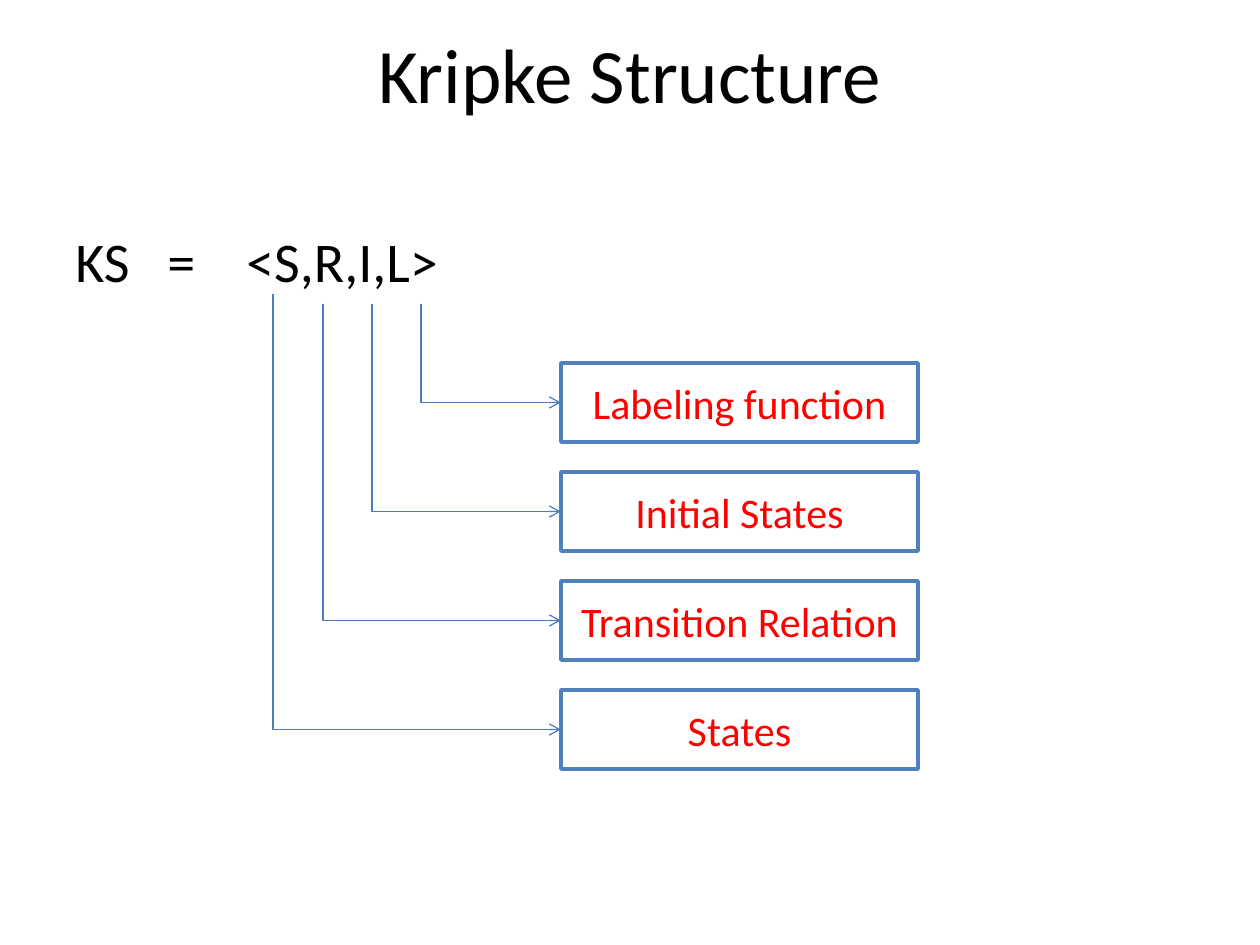
from lxml import etree
from pptx import Presentation, util as u
from pptx.dml.color import RGBColor
from pptx.enum import shapes, text
from pptx.oxml.ns import qn

# Content
TITLE = "Kripke Structure"
DEFINITION = "KS\t=\t<S,R,I,L>"
TAB_STOPS = (92, 171)  # px from the left edge of the text
COMPONENTS = [  # meaning, x and y where its arrow leaves the tuple
    ("Labeling function", 421, 304),
    ("Initial States", 372, 304),
    ("Transition Relation", 323, 304),
    ("States", 273, 294),
]

# Layout in px
BOX_LEFT, BOX_TOP, BOX_W, BOX_H, BOX_PITCH = 561, 363, 357, 79, 109
FONT = "Calibri"
BLACK, RED, WHITE, BORDER, ARROW = "000000", "FF0000", "FFFFFF", "4F81BD", "4B7EBC"


def px(n):
    return u.Emu(round(n * 914400 / 126))


def rgb(value):
    return RGBColor.from_string(value)


def write(shape, words, size, color, align, anchor):
    frame = shape.text_frame
    frame.word_wrap = True
    frame.vertical_anchor = anchor
    frame.text = words
    line = frame.paragraphs[0]
    line.alignment = align
    for run in line.runs:
        run.font.name = FONT
        run.font.size = u.Pt(size)
        run.font.color.rgb = rgb(color)
    return line


def add_meaning(slide, words, top):
    box = slide.shapes.add_shape(shapes.MSO_SHAPE.RECTANGLE,
                                 px(BOX_LEFT), px(top), px(BOX_W), px(BOX_H))
    box.shadow.inherit = False
    box.fill.solid()
    box.fill.fore_color.rgb = rgb(WHITE)
    box.line.color.rgb = rgb(BORDER)
    box.line.width = u.Pt(2)
    write(box, words, 24, RED, text.PP_ALIGN.CENTER, text.MSO_ANCHOR.MIDDLE)


def add_arrow(slide, x, y, end_y):
    arrow = slide.shapes.add_connector(shapes.MSO_CONNECTOR.ELBOW,
                                       px(x), px(y), px(BOX_LEFT), px(end_y))
    arrow.line.color.rgb = rgb(ARROW)
    arrow.line.width = u.Pt(0.75)
    properties = arrow._element.spPr
    # Bend at the start: straight down, then right
    adjustments = properties.find(qn("a:prstGeom")).get_or_add_avLst()
    etree.SubElement(adjustments, qn("a:gd"), name="adj1", fmla="val 0")
    etree.SubElement(properties.find(qn("a:ln")), qn("a:tailEnd"), type="arrow")
    etree.SubElement(properties, qn("a:effectLst"))


def main():
    deck = Presentation()
    deck.slide_width, deck.slide_height = px(1260), px(945)
    slide = deck.slides.add_slide(deck.slide_layouts[6])

    # Title
    title = slide.shapes.add_textbox(px(63), px(0), px(1134), px(145))
    write(title, TITLE, 44, BLACK, text.PP_ALIGN.CENTER, text.MSO_ANCHOR.MIDDLE)

    # Definition, spaced by tab stops
    definition = slide.shapes.add_textbox(px(63), px(220), px(1134), px(580))
    line = write(definition, DEFINITION, 32, BLACK,
                 text.PP_ALIGN.LEFT, text.MSO_ANCHOR.TOP)
    tabs = etree.SubElement(line._p.get_or_add_pPr(), qn("a:tabLst"))
    for stop in TAB_STOPS:
        etree.SubElement(tabs, qn("a:tab"), pos=str(px(stop)), algn="l")

    # Meanings and the arrows leading to them
    for row, (meaning, x, y) in enumerate(COMPONENTS):
        top = BOX_TOP + row * BOX_PITCH
        add_meaning(slide, meaning, top)
        add_arrow(slide, x, y, top + BOX_H / 2)

    deck.save("out.pptx")


if __name__ == "__main__":
    main()
